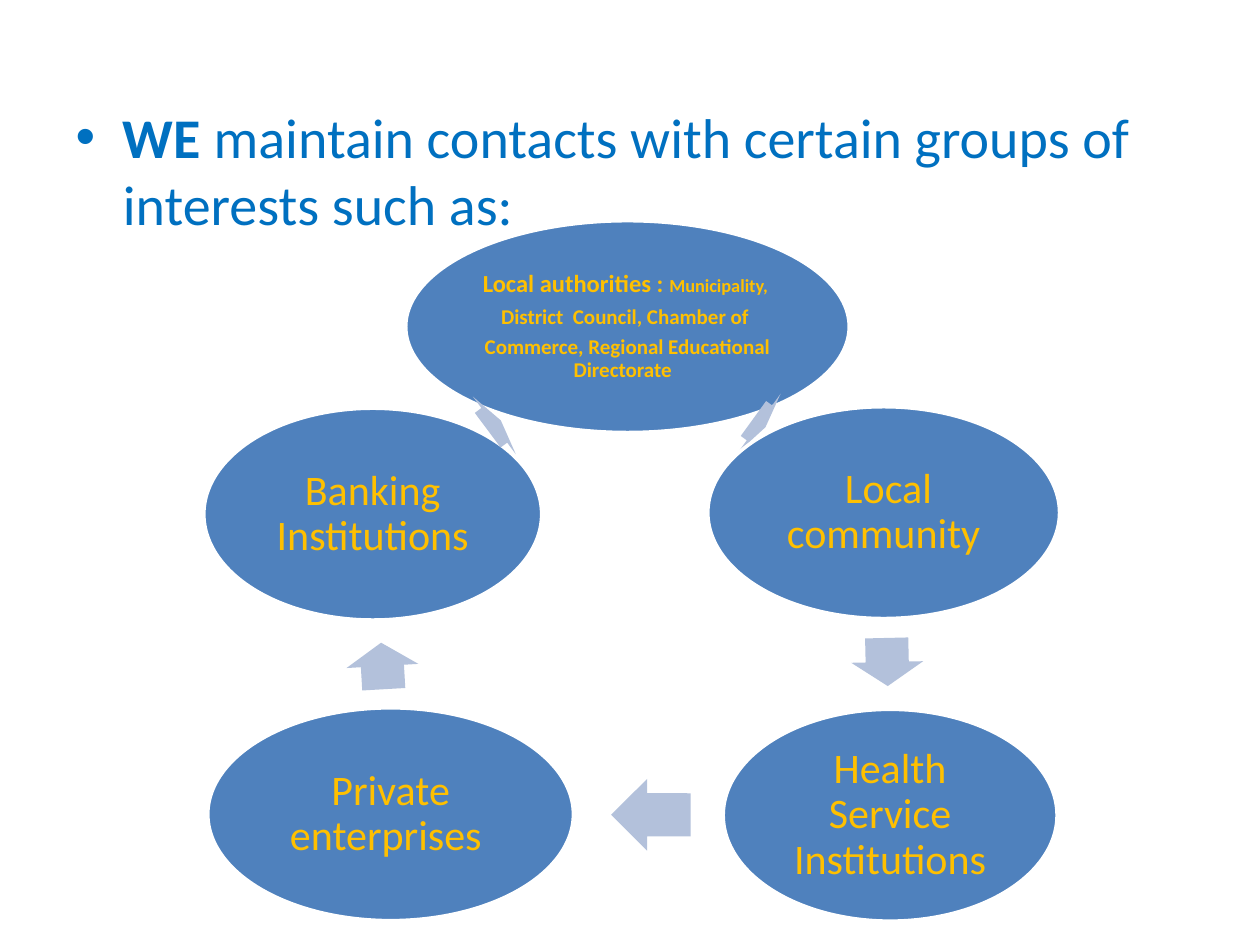
from dataclasses import dataclass

from pptx import Presentation
from pptx.dml.color import RGBColor as RGB
from pptx.enum.shapes import MSO_SHAPE as Shape
from pptx.enum.text import MSO_ANCHOR as Anchor, PP_ALIGN as Align
from pptx.util import Cm, Pt


@dataclass(frozen=True)
class Theme:
    font: str = "Calibri"
    heading: RGB = RGB(0x00, 0x70, 0xC0)
    group: RGB = RGB(0x4F, 0x81, 0xBD)
    edge: RGB = RGB(0xFF, 0xFF, 0xFF)
    arrow: RGB = RGB(0xB3, 0xC1, 0xDB)
    label: RGB = RGB(0xFF, 0xC0, 0x00)
    heading_size: float = 32
    label_size: float = 24
    lead_size: float = 14
    detail_size: float = 12
    small_size: float = 10.5


THEME = Theme()


@dataclass(frozen=True)
class Box:
    """Position and size in centimetres."""
    left: float
    top: float
    width: float
    height: float

    def lengths(self):
        return Cm(self.left), Cm(self.top), Cm(self.width), Cm(self.height)


@dataclass(frozen=True)
class Run:
    text: str
    size: float = THEME.label_size
    bold: bool = False


@dataclass(frozen=True)
class Group:
    box: Box
    paragraphs: tuple[tuple[Run, ...], ...]
    inset: float = 0.08


@dataclass(frozen=True)
class Arrow:
    box: Box
    rotation: float


AUTHORITIES = (
    (Run("Local authorities : ", THEME.lead_size, True),
     Run("Municipality, ", THEME.small_size, True)),
    (Run("District  Council, Chamber of ", THEME.detail_size, True),),
    (Run("Commerce, Regional Educational Directorate  ", THEME.detail_size, True),),
)

# Clockwise from the top, each group followed by the arrow to the next one
CYCLE = (
    Group(Box(8.18, 4.45, 8.94, 4.27), AUTHORITIES, inset=0.05),
    Arrow(Box(15.16, 7.8, 0.3, 1.45), 36),
    Group(Box(14.27, 8.2, 7.09, 4.27), ((Run(" Local community"),),)),
    Arrow(Box(17.4, 12.62, 0.97, 1.45), 88.7),
    Group(Box(14.58, 14.3, 6.73, 4.27), ((Run("Health Service Institutions"),),)),
    Arrow(Box(12.32, 15.7, 1.6, 1.45), 180.1),
    Group(Box(4.19, 14.27, 7.37, 4.29), ((Run("Private enterprises "),),)),
    Arrow(Box(7.24, 12.7, 0.94, 1.45), 266.7),
    Group(Box(4.11, 8.23, 6.81, 4.27), ((Run("Banking Institutions"),),)),
    Arrow(Box(9.8, 7.85, 0.33, 1.45), 323.3),
)


def add_text(p, text: str, *, size: float, color: RGB, bold: bool = False) -> None:
    r = p.add_run()
    r.text = text
    r.font.name = THEME.font
    r.font.size = Pt(size)
    r.font.bold = bold
    r.font.color.rgb = color


def add_filled(slide, kind: Shape, box: Box, fill: RGB):
    sp = slide.shapes.add_shape(kind, *box.lengths())
    sp.shadow.inherit = False
    sp.fill.solid()
    sp.fill.fore_color.rgb = fill
    return sp


def add_group(slide, group: Group) -> None:
    sp = add_filled(slide, Shape.OVAL, group.box, THEME.group)
    sp.line.color.rgb = THEME.edge
    sp.line.width = Pt(2)
    tf = sp.text_frame
    tf.word_wrap = True
    tf.vertical_anchor = Anchor.MIDDLE
    tf.margin_left = tf.margin_right = Cm(group.inset)
    tf.margin_top = tf.margin_bottom = Cm(group.inset)
    for i, runs in enumerate(group.paragraphs):
        p = tf.add_paragraph() if i else tf.paragraphs[0]
        p.alignment = Align.CENTER
        p.line_spacing = 0.9
        p.space_after = Pt(round(0.35 * runs[0].size, 1))
        for run in runs:
            add_text(p, run.text, size=run.size, color=THEME.label, bold=run.bold)


def add_arrow(slide, arrow: Arrow) -> None:
    sp = add_filled(slide, Shape.RIGHT_ARROW, arrow.box, THEME.arrow)
    sp.line.fill.background()
    sp.adjustments[0] = 0.6
    sp.adjustments[1] = 0.5
    sp.rotation = arrow.rotation


def add_heading(slide) -> None:
    """Fill the bulleted body placeholder and drop the unused title."""
    title = slide.shapes.title.element
    title.getparent().remove(title)
    body = slide.placeholders[1]
    body.left, body.top, body.width, body.height = Box(1.27, 1.93, 22.86, 15.09).lengths()
    p = body.text_frame.paragraphs[0]
    style = dict(size=THEME.heading_size, color=THEME.heading)
    add_text(p, "WE ", bold=True, **style)
    add_text(p, "maintain contacts with certain groups of interests such as:", **style)


def main() -> None:
    prs = Presentation()
    prs.slide_width, prs.slide_height = Cm(25.4), Cm(19.05)
    slide = prs.slides.add_slide(prs.slide_layouts[1])
    add_heading(slide)
    for item in CYCLE:
        if isinstance(item, Group):
            add_group(slide, item)
        else:
            add_arrow(slide, item)
    prs.save("out.pptx")


if __name__ == "__main__":
    main()
